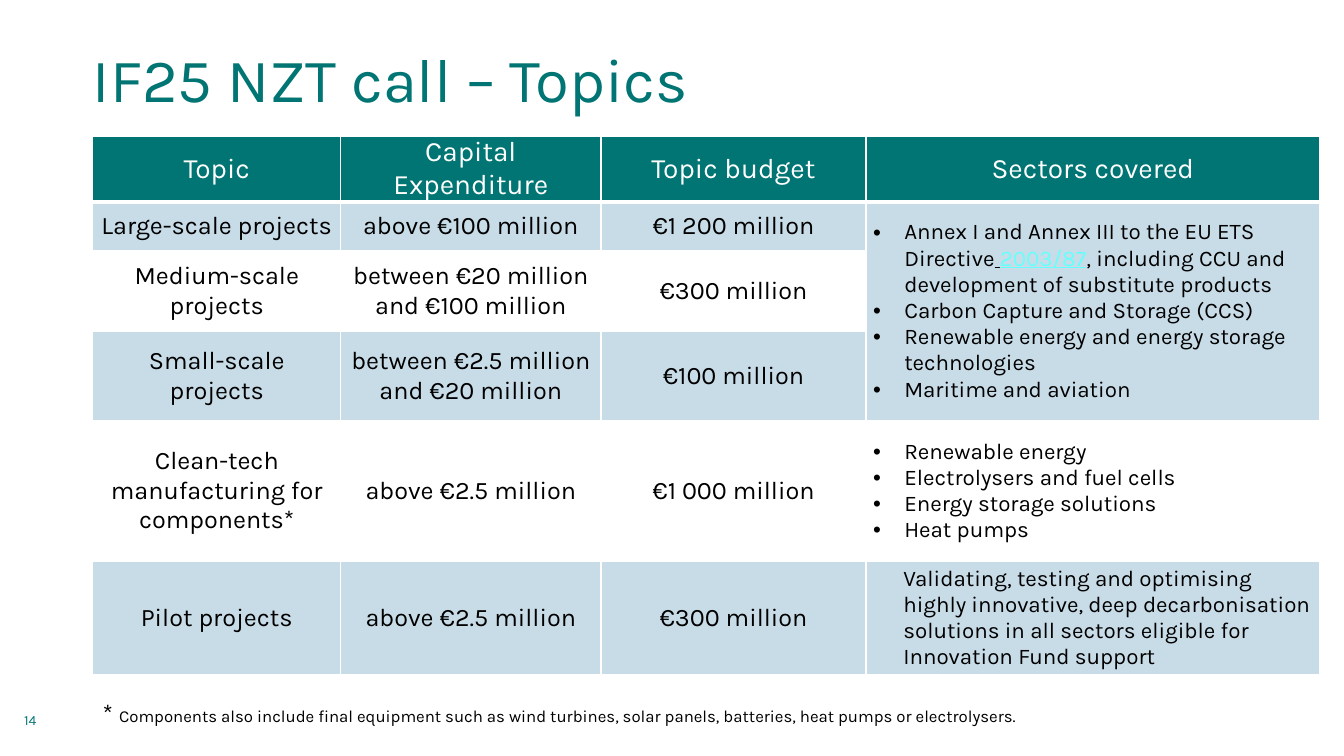
import pptx
import pptx.util
import pptx.dml.color
import pptx.enum.text
import pptx.oxml
import pptx.oxml.ns
from lxml import etree

RGB = pptx.dml.color.RGBColor
TEAL = RGB(0x00, 0x75, 0x73)
PALE = RGB(0xC8, 0xDC, 0xE8)
WHITE = RGB(0xFF, 0xFF, 0xFF)
BLACK = RGB(0x00, 0x00, 0x00)
CYAN = RGB(0x66, 0xFF, 0xFC)

ALIGN = pptx.enum.text.PP_ALIGN
ANCHOR = pptx.enum.text.MSO_ANCHOR
FONT = "Karla"
PX = 9144  # 100 px to the inch

COLS = [246, 258, 263, 450]
ROWS = [49, 49, 80, 88, 140, 112]
HEAD = ["Topic", "Capital Expenditure", "Topic budget", "Sectors covered"]
BODY = [
    ["Large-scale projects", "above €100 million", "€1 200 million"],
    ["Medium-scale projects", "between €20 million and €100 million", "€300 million"],
    ["Small-scale projects", "between €2.5 million and €20 million", "€100 million"],
    ["Clean-tech manufacturing for components*", "above €2.5 million", "€1 000 million"],
    ["Pilot projects", "above €2.5 million", "€300 million"],
]
# Each paragraph is a list of runs.
ETS = [
    ["Annex I and Annex III to the EU ETS Directive", " ", "2003/87",
     ", including CCU and development of substitute products"],
    ["Carbon Capture and Storage (CCS)"],
    ["Renewable energy and energy storage technologies"],
    ["Maritime and aviation"],
]
CLEAN = [["Renewable energy"], ["Electrolysers and fuel cells"],
         ["Energy storage solutions"], ["Heat pumps"]]
PILOT = [["Validating, testing and optimising highly innovative, deep decarbonisation "
          "solutions in all sectors eligible for Innovation Fund support"]]


def px(*nums):
    return [num * PX for num in nums]


def style(run, size, color):
    font = run.font
    font.name, font.size, font.bold = FONT, pptx.util.Pt(size), False
    font.color.rgb = color


def inset(item, left, top, right, bottom):
    item.margin_left, item.margin_top, item.margin_right, item.margin_bottom = px(
        left, top, right, bottom)


def indent(para, left, hang, mark=None):
    props = para._p.get_or_add_pPr()
    props.set("marL", str(left * PX))
    props.set("indent", str(-hang * PX))
    if mark:
        tag = pptx.oxml.ns.qn
        etree.SubElement(props, tag("a:buFont")).set("typeface", "Arial")
        etree.SubElement(props, tag("a:buChar")).set("char", mark)


def edge(cell, base):
    """Draw white cell borders; base is the bottom width in points."""
    props = cell._tc.get_or_add_tcPr()
    for side, width in (("L", 1), ("R", 1), ("T", 1), ("B", base)):
        props.append(pptx.oxml.parse_xml(
            f'<a:ln{side} {pptx.oxml.ns.nsdecls("a")} w="{pptx.util.Pt(width)}">'
            f'<a:solidFill><a:srgbClr val="{WHITE}"/></a:solidFill></a:ln{side}>'))


def paint(cell, color, base=1):
    edge(cell, base)
    cell.fill.solid()
    cell.fill.fore_color.rgb = color
    cell.vertical_anchor = ANCHOR.MIDDLE
    inset(cell, 7, 0, 7, 0)


def label(cell, text, size, color):
    cell.text_frame.text = text
    para = cell.text_frame.paragraphs[0]
    para.alignment = ALIGN.CENTER
    style(para.runs[0], size, color)


def sector(cell, paras, left, hang, mark=None):
    frame = cell.text_frame
    for num, parts in enumerate(paras):
        para = frame.add_paragraph() if num else frame.paragraphs[0]
        indent(para, left, hang, mark)
        for part in parts:
            run = para.add_run()
            run.text = part
            style(run, 16, BLACK)


def add_grid(slide):
    grid = slide.shapes.add_table(
        len(ROWS), len(COLS), *px(92, 135, sum(COLS), sum(ROWS))).table
    for col, width in zip(grid.columns, COLS):
        col.width = width * PX
    for row, height in zip(grid.rows, ROWS):
        row.height = height * PX

    for col, text in enumerate(HEAD):
        paint(grid.cell(0, col), TEAL, 3)
        label(grid.cell(0, col), text, 20, WHITE)
    for row, texts in enumerate(BODY, 1):
        for col in range(len(COLS)):
            paint(grid.cell(row, col), PALE if row % 2 else WHITE)
        for col, text in enumerate(texts):
            label(grid.cell(row, col), text, 18, BLACK)

    ets = grid.cell(1, 3)
    ets.merge(grid.cell(3, 3))
    sector(ets, ETS, 31, 31, "•")
    sector(grid.cell(4, 3), CLEAN, 31, 31, "•")
    sector(grid.cell(5, 3), PILOT, 30, 0)
    gap, link = ets.text_frame.paragraphs[0].runs[1:3]
    gap.font.underline = link.font.underline = True
    link.font.color.rgb = CYAN


def add_title(slide, text):
    title = slide.shapes.title
    title.left, title.top, title.width, title.height = px(92, 34, 1150, 91)
    frame = title.text_frame
    frame.text = text
    frame.vertical_anchor = ANCHOR.MIDDLE
    inset(frame, 0, 5, 10, 0)
    para = frame.paragraphs[0]
    para.alignment, para.line_spacing = ALIGN.LEFT, 0.9
    style(para.runs[0], 44, TEAL)


def add_note(slide, box, parts, color, anchor):
    """Add a text box of one paragraph; parts are (text, size) runs."""
    frame = slide.shapes.add_textbox(*px(*box)).text_frame
    frame.word_wrap = True
    frame.vertical_anchor = anchor
    for text, size in parts:
        run = frame.paragraphs[0].add_run()
        run.text = text
        style(run, size, color)


def main():
    deck = pptx.Presentation()
    deck.slide_width, deck.slide_height = px(1333, 750)
    slide = deck.slides.add_slide(deck.slide_layouts[5])
    add_title(slide, "IF25 NZT call – Topics")
    add_grid(slide)
    add_note(slide, (14, 687, 78, 40), [("14", 10)], TEAL, ANCHOR.BOTTOM)
    add_note(slide, (92, 687, 952, 40), [
        ("* ", 18),
        ("Components also include final equipment such as wind turbines, solar panels, "
         "batteries, heat pumps or electrolysers.", 12)], BLACK, ANCHOR.TOP)
    deck.save("out.pptx")


if __name__ == "__main__":
    main()
